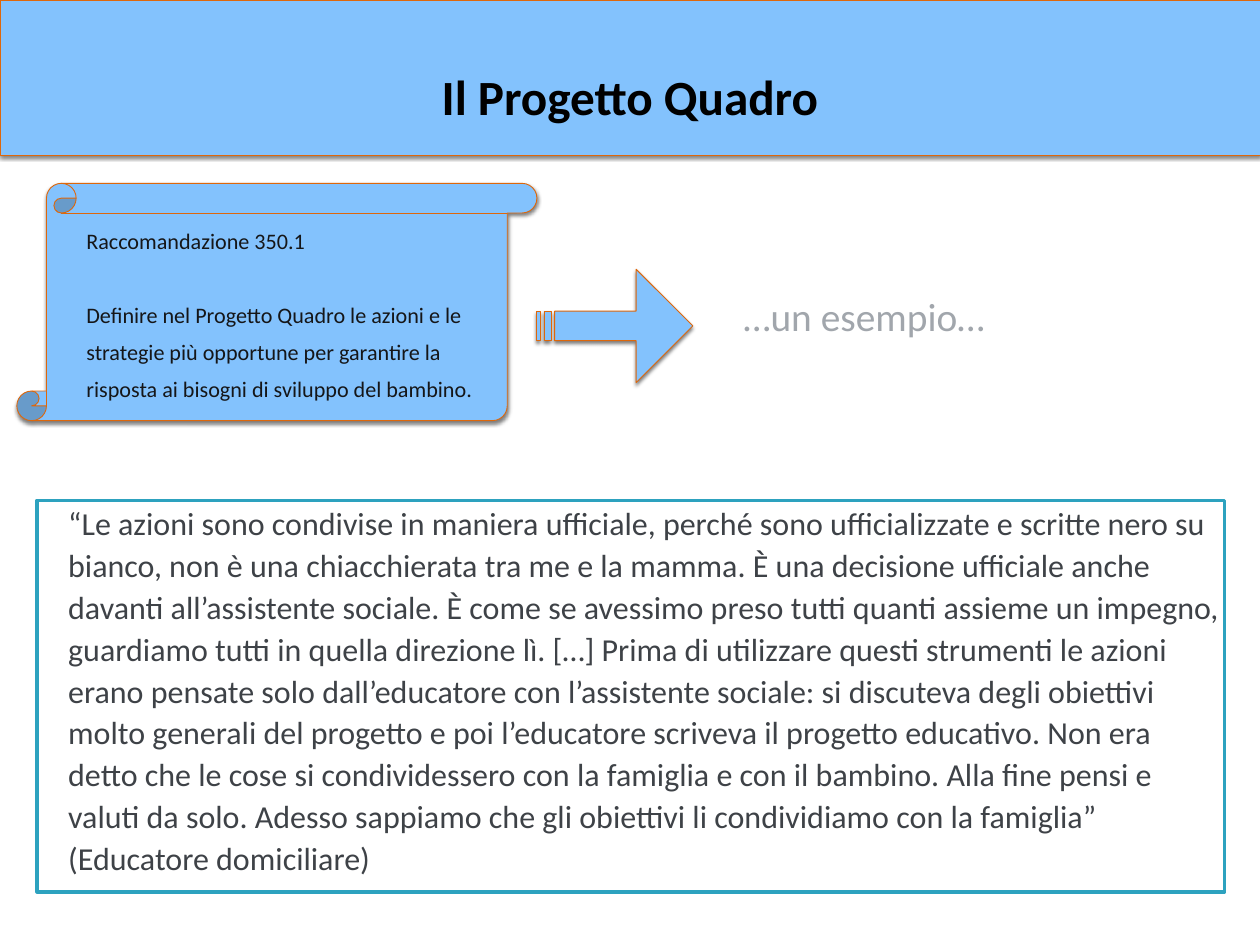
from lxml import etree
from pptx import Presentation
from pptx import util as u
from pptx.dml.color import RGBColor
from pptx.enum import shapes, text
from pptx.oxml.ns import qn

FONT = "Calibri"
SKY, ORANGE, TEAL, WHITE = "83C2FD", "DE670B", "2DA2BF", "FFFFFF"
QUOTE = (
    "“Le azioni sono condivise in maniera ufficiale, perché sono ufficializzate e "
    "scritte nero su bianco, non è una chiacchierata tra me e la mamma. È una decisione "
    "ufficiale anche davanti all’assistente sociale. È come se avessimo preso tutti "
    "quanti assieme un impegno, guardiamo tutti in quella direzione lì. […] Prima di "
    "utilizzare questi strumenti le azioni erano pensate solo dall’educatore con "
    "l’assistente sociale: si discuteva degli obiettivi molto generali del progetto e "
    "poi l’educatore scriveva il progetto educativo. Non era detto che le cose si "
    "condividessero con la famiglia e con il bambino. Alla fine pensi e valuti da solo. "
    "Adesso sappiamo che gli obiettivi li condividiamo con la famiglia” "
    "(Educatore domiciliare)"
)
ADVICE = (
    "Definire nel Progetto Quadro le azioni e le strategie più opportune per garantire "
    "la risposta ai bisogni di sviluppo del bambino."
)


def rgb(value):
    return RGBColor.from_string(value)


def paint(sp, fill, line, width):
    sp.fill.solid()
    sp.fill.fore_color.rgb = rgb(fill)
    sp.line.color.rgb = rgb(line)
    sp.line.width = u.Pt(width)
    sp.shadow.inherit = False


def paint_raised(sp):
    """Sky fill, thin orange outline and a soft shadow below."""
    paint(sp, SKY, ORANGE, 0.75)
    effects = sp._element.spPr.find(qn("a:effectLst"))
    shadow = etree.SubElement(
        effects, qn("a:outerShdw"), blurRad=str(u.Pt(3)), dist=str(u.Pt(2)),
        dir="5400000", algn="ctr", rotWithShape="0")
    color = etree.SubElement(shadow, qn("a:srgbClr"), val="000000")
    etree.SubElement(color, qn("a:alpha"), val="50000")


def set_frame(sp, anchor, inset):
    tf = sp.text_frame
    tf.word_wrap = True
    tf.auto_size = text.MSO_AUTO_SIZE.NONE
    tf.vertical_anchor = anchor
    tf.margin_left = tf.margin_top = tf.margin_right = tf.margin_bottom = u.Inches(inset)
    return tf


def write(p, content, size, color, spacing, bold=False, align=text.PP_ALIGN.LEFT, indent=0):
    p.alignment = align
    p.line_spacing = spacing
    if indent:
        pPr = p._p.get_or_add_pPr()
        pPr.set("marL", str(u.Inches(indent)))
        pPr.set("indent", "0")
    r = p.add_run()
    r.text = content
    r.font.name = FONT
    r.font.size = u.Pt(size)
    r.font.bold = bold
    r.font.color.rgb = rgb(color)


def add_shape(s, kind, left, top, width, height):
    return s.shapes.add_shape(
        kind, u.Inches(left), u.Inches(top), u.Inches(width), u.Inches(height))


def add_title_band(s, width):
    sp = s.shapes.title
    sp.left, sp.top, sp.width, sp.height = 0, 0, width, u.Inches(1.75)
    paint_raised(sp)
    tf = set_frame(sp, text.MSO_ANCHOR.BOTTOM, 0.13)
    tf.margin_bottom = u.Inches(0.33)
    write(tf.paragraphs[0], "Il Progetto Quadro", 40, "000000", 0.9,
          bold=True, align=text.PP_ALIGN.CENTER)


def add_example_label(s):
    sp = s.shapes.add_textbox(
        u.Inches(8.33), u.Inches(3.47), u.Inches(5.31), u.Inches(0.44))
    tf = set_frame(sp, text.MSO_ANCHOR.MIDDLE, 0.06)
    write(tf.paragraphs[0], "…un esempio…", 32, "A1A6AC", u.Pt(20))


def add_quote(s):
    sp = add_shape(s, shapes.MSO_SHAPE.RECTANGLE, 0.42, 5.65, 13.4, 4.42)
    paint(sp, WHITE, TEAL, 3)
    tf = set_frame(sp, text.MSO_ANCHOR.TOP, 0)
    write(tf.paragraphs[0], QUOTE, 26, "3E4247", u.Pt(34), indent=0.35)


def add_scroll(s):
    sp = add_shape(s, shapes.MSO_SHAPE.VERTICAL_SCROLL, 0.19, 2.07, 5.87, 2.68)
    paint_raised(sp)
    tf = set_frame(sp, text.MSO_ANCHOR.MIDDLE, 0.06)
    heading, advice = tf.paragraphs[0], tf.add_paragraph()
    advice.space_before = u.Pt(30)
    for p, content in ((heading, "Raccomandazione 350.1"), (advice, ADVICE)):
        write(p, content, 18, "151618", u.Pt(30), indent=0.39)


def add_arrow(s):
    sp = add_shape(s, shapes.MSO_SHAPE.STRIPED_RIGHT_ARROW, 6.06, 3.04, 1.76, 1.28)
    sp.adjustments[0] = 0.26
    sp.adjustments[1] = 0.5
    paint_raised(sp)


def main():
    prs = Presentation()
    prs.slide_width, prs.slide_height = u.Inches(14.22), u.Inches(10.67)
    s = prs.slides.add_slide(prs.slide_layouts[5])
    add_title_band(s, prs.slide_width)
    add_example_label(s)
    add_quote(s)
    add_scroll(s)
    add_arrow(s)
    prs.save("out.pptx")


if __name__ == "__main__":
    main()
